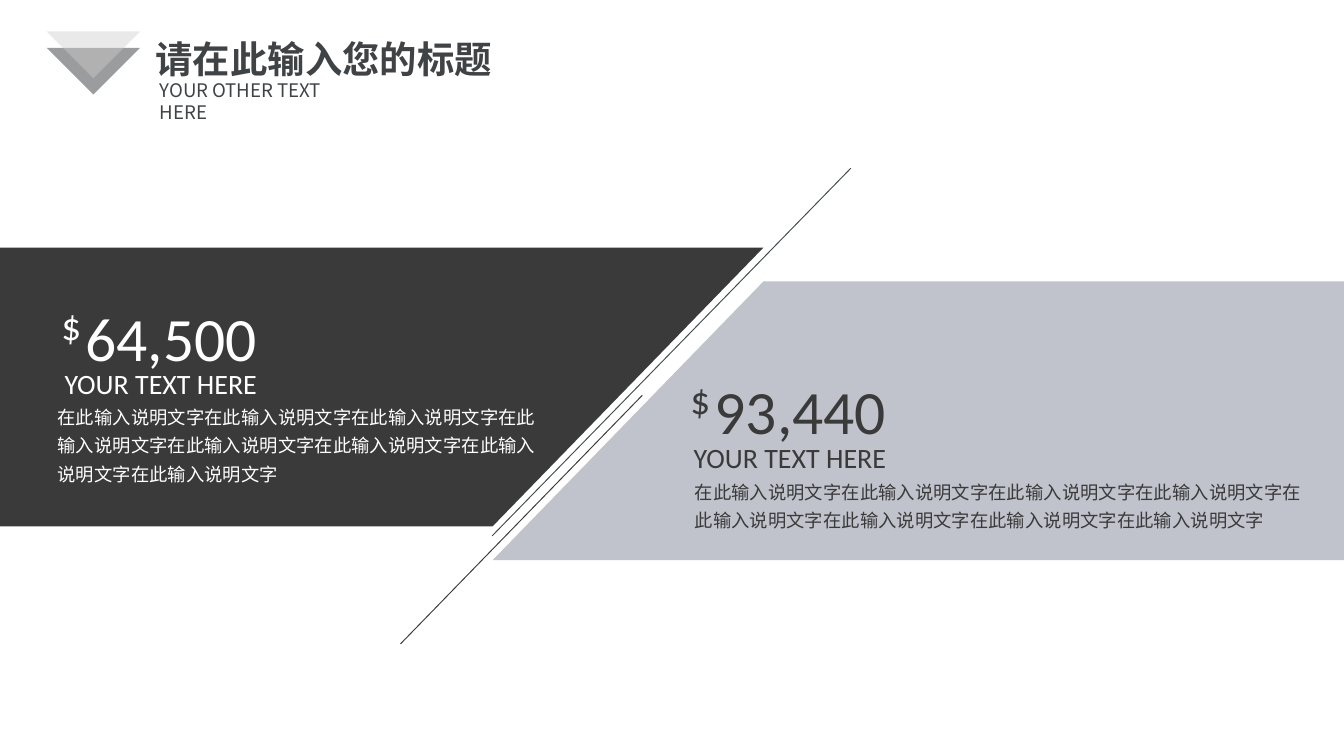
from lxml import etree
from pptx import Presentation
from pptx.dml.color import RGBColor
from pptx.enum.shapes import MSO_CONNECTOR
from pptx.enum.text import MSO_AUTO_SIZE, PP_ALIGN
from pptx.oxml.ns import qn
from pptx.util import Cm, Pt

LEFT, CENTER = PP_ALIGN.LEFT, PP_ALIGN.CENTER
GROW = MSO_AUTO_SIZE.SHAPE_TO_FIT_TEXT
STRAIGHT = MSO_CONNECTOR.STRAIGHT
CJK, LATIN = "Noto Sans CJK SC", "Calibri"
COLORS = {
    "title": "3F4346", "dark": "3A3A3A", "light": "C0C2CC", "white": "FFFFFF",
    "line": "424A4D", "mark_dark": "191A1E", "mark_light": "D0CECE",
}

prs = Presentation()
prs.slide_width, prs.slide_height = Cm(25.4), Cm(14.29)
s = prs.slides.add_slide(prs.slide_layouts[6])


def add_text(text, x, y, w, h, size, color, font=LATIN, bold=False,
             align=LEFT, wrap=True, spacing=None):
    tf = s.shapes.add_textbox(Cm(x), Cm(y), Cm(w), Cm(h)).text_frame
    tf.word_wrap = wrap
    tf.auto_size = GROW
    p = tf.paragraphs[0]
    p.alignment = align
    if spacing:
        p.line_spacing = Pt(spacing)
    r = p.add_run()
    r.text = text
    r.font.name, r.font.size, r.font.bold = font, Pt(size), bold
    r.font.color.rgb = RGBColor.from_string(COLORS[color])
    etree.SubElement(r.font._element, qn("a:ea"), typeface=font)


def add_polygon(points, color):
    pts = [(Cm(x), Cm(y)) for x, y in points]
    fb = s.shapes.build_freeform(*pts[0])
    fb.add_line_segments(pts[1:], close=True)
    sp = fb.convert_to_shape()
    sp.shadow.inherit = False
    sp.fill.solid()
    sp.fill.fore_color.rgb = RGBColor.from_string(COLORS[color])
    sp.line.fill.background()
    return sp


# Title mark: two translucent right triangles turned to point down
x, side = 1.14, 1.25
for y, color in ((0.28, "mark_dark"), (-0.03, "mark_light")):
    sp = add_polygon([(x, y + side), (x + side, y), (x + side, y + side)], color)
    sp.rotation = 45
    rgb = sp.fill._xPr.find(".//" + qn("a:srgbClr"))
    etree.SubElement(rgb, qn("a:alpha"), val="43000")

# Title
add_text("请在此输入您的标题", 2.69, 0.48, 6.88, 1.09, 20, "title",
         font=CJK, bold=True, wrap=False, spacing=26.5)
add_text("YOUR OTHER TEXT HERE", 2.77, 1.36, 4.04, 0.69, 10, "title",
         font=CJK, spacing=12)

# Slanted panels
low_x, high_x, panel_h = 9.31, 14.43, 5.27
for edge, y, color in ((25.4, 5.32, "light"), (0, 4.68, "dark")):
    add_polygon([(edge, y), (high_x, y), (low_x, y + panel_h), (edge, y + panel_h)],
                color)

# Diagonal lines
for x1, y1, x2, y2, color in ((16.08, 3.18, 9.3, 10.13, "line"),
                              (12.14, 7.47, 7.57, 12.17, "dark")):
    line = s.shapes.add_connector(STRAIGHT, Cm(x1), Cm(y1), Cm(x2), Cm(y2))
    line.line.width = Pt(0.5)
    line.line.color.rgb = RGBColor.from_string(COLORS[color])
    etree.SubElement(line._element.spPr, qn("a:effectLst"))

# Amount, label and description on each panel
description = "在此输入说明文字" * 8
for amount, x, y, color, body in (
        ("64,500", 1.37, 5.54, "white", (0.84, 7.42, 9.78, 1.88)),
        ("93,440", 13.26, 6.93, "dark", (12.88, 8.84, 12.17, 1.32))):
    add_text("YOUR TEXT HERE", x - 2.1, y + 1.27, 7.54, 0.9, 15, color, align=CENTER)
    add_text(description, *body, 9.8, color, font=CJK, spacing=15.3)
    add_text(amount, x, y, 3.99, 1.65, 33, color, wrap=False)
    add_text("$", x - 0.46, y + 0.04, 0.89, 1.14, 21, color, wrap=False)

prs.save("out.pptx")
